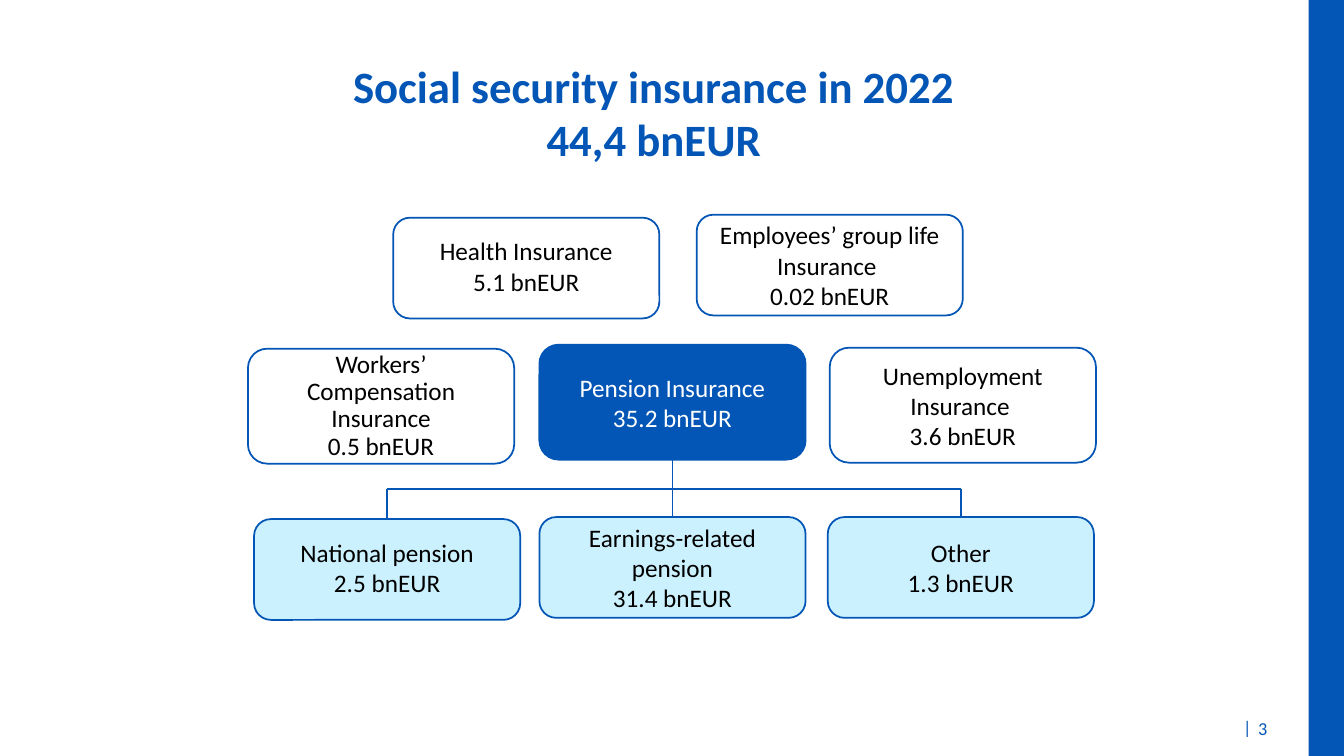
from lxml import etree
from pptx import Presentation
from pptx.dml.color import RGBColor
from pptx.enum.shapes import MSO_CONNECTOR, MSO_SHAPE
from pptx.enum.text import MSO_ANCHOR, PP_ALIGN
from pptx.oxml.ns import qn
from pptx.util import Inches, Pt

BLUE, PALE, BLACK, WHITE = "0356B5", "CCF1FE", "000000", "FFFFFF"
FONT = "Calibri"
TITLE = ["Social security insurance in 2022", "44,4 bnEUR"]
BOX_WIDTH, LOW, TALL = 2.64, 1.0, 1.14
BUS_Y = 4.85

# name: lines, left, top, height, fill, text colour, spacing of each line
BOXES = {
    "group life": (["Employees’ group life Insurance ", "0.02 bnEUR"], 6.91, 2.13, LOW, None, BLACK, (1, 1)),
    "unemployment": (["Unemployment Insurance ", "3.6 bnEUR"], 8.23, 3.45, TALL, None, BLACK, (1, 1)),
    "health": (["Health Insurance", "5.1 bnEUR"], 3.9, 2.16, LOW, None, BLACK, (0.85, 1)),
    "workers": (["Workers’ Compensation Insurance", "0.5 bnEUR"], 2.46, 3.46, TALL, None, BLACK, (0.9, 0.9)),
    "pension": (["Pension Insurance", "35.2 bnEUR"], 5.35, 3.42, TALL, BLUE, WHITE, (1, 1)),
    "earnings": (["Earnings-related pension", "31.4 bnEUR"], 5.35, 5.13, LOW, PALE, BLACK, (1, 1)),
    "national": (["National pension", "2.5 bnEUR"], 2.52, 5.15, LOW, PALE, BLACK, (0.85, 1)),
    "other": (["Other", "1.3 bnEUR"], 8.21, 5.13, LOW, PALE, BLACK, (1, 1)),
}


def color(value):
    return RGBColor.from_string(value)


def write(frame, lines, size, text_color, align, anchor, bold=False, spacing=(1, 1)):
    frame.word_wrap = True
    frame.vertical_anchor = anchor
    for index, line in enumerate(lines):
        paragraph = frame.paragraphs[0] if index == 0 else frame.add_paragraph()
        paragraph.alignment = align
        paragraph.line_spacing = spacing[index]
        run = paragraph.add_run()
        run.text = line
        run.font.name, run.font.size, run.font.bold = FONT, Pt(size), bold
        run.font.color.rgb = color(text_color)


def add_text(slide, lines, left, top, width, height, size, align, anchor, bold=False):
    box = slide.shapes.add_textbox(Inches(left), Inches(top), Inches(width), Inches(height))
    write(box.text_frame, lines, size, BLUE, align, anchor, bold)


def add_shape(slide, kind, left, top, width, height, fill):
    shape = slide.shapes.add_shape(kind, Inches(left), Inches(top), Inches(width), Inches(height))
    shape.shadow.inherit = False
    if fill:
        shape.fill.solid()
        shape.fill.fore_color.rgb = color(fill)
    else:
        shape.fill.background()
    return shape


def add_line(slide, x1, y1, x2, y2):
    line = slide.shapes.add_connector(
        MSO_CONNECTOR.STRAIGHT, Inches(x1), Inches(y1), Inches(x2), Inches(y2))
    line.line.color.rgb = color(BLUE)
    line.line.width = Pt(1.25)
    etree.SubElement(line._element.spPr, qn("a:effectLst"))
    return line


def main():
    presentation = Presentation()
    presentation.slide_width, presentation.slide_height = Inches(13.33), Inches(7.5)
    slide = presentation.slides.add_slide(presentation.slide_layouts[6])

    side_bar = add_shape(slide, MSO_SHAPE.RECTANGLE, 12.98, 0, 0.35, 7.5, BLUE)
    side_bar.line.fill.background()
    add_text(slide, ["|"], 12.23, 7.06, 0.29, 0.35, 13, PP_ALIGN.LEFT, MSO_ANCHOR.TOP)
    add_text(slide, ["3"], 12.38, 7.05, 0.44, 0.35, 13, PP_ALIGN.LEFT, MSO_ANCHOR.MIDDLE)
    add_text(slide, TITLE, 0, 0.53, 12.97, 1.1, 32, PP_ALIGN.CENTER, MSO_ANCHOR.TOP, True)

    shapes = {}
    for name, (lines, left, top, height, fill, text_color, spacing) in BOXES.items():
        shape = add_shape(slide, MSO_SHAPE.ROUNDED_RECTANGLE, left, top, BOX_WIDTH, height, fill)
        shape.line.color.rgb = color(BLUE)
        shape.line.width = Pt(1.25)
        write(shape.text_frame, lines, 18, text_color, PP_ALIGN.CENTER, MSO_ANCHOR.MIDDLE,
              spacing=spacing)
        shapes[name] = shape

    middle = {name: box[1] + BOX_WIDTH / 2 for name, box in BOXES.items()}
    add_line(slide, middle["national"], BUS_Y, middle["other"], BUS_Y)
    for name in ("national", "other"):
        drop = add_line(slide, middle[name], BUS_Y, middle[name], BOXES[name][2])
        drop.end_connect(shapes[name], 0)
    trunk = add_line(slide, middle["pension"], BUS_Y, middle["earnings"], BUS_Y)
    trunk.begin_connect(shapes["pension"], 2)
    trunk.end_connect(shapes["earnings"], 0)

    presentation.save("out.pptx")


if __name__ == "__main__":
    main()
